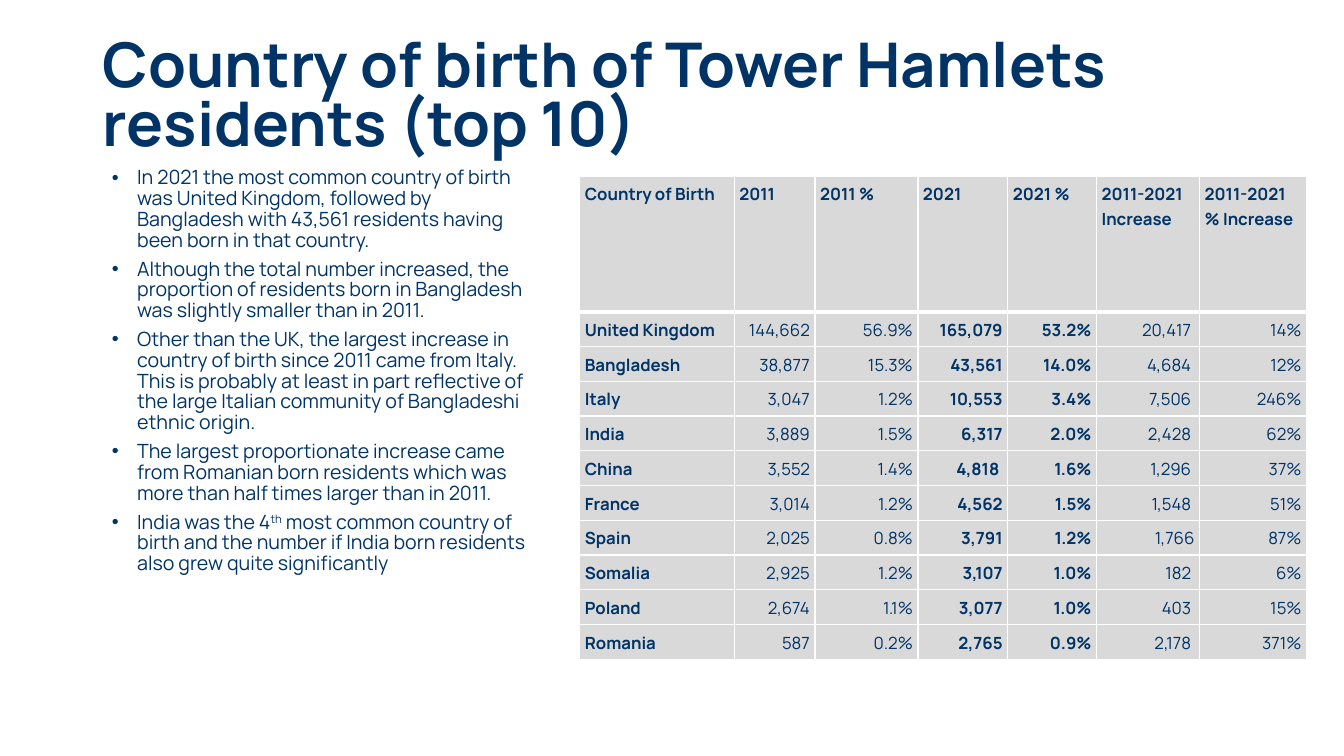
from dataclasses import dataclass
from lxml.etree import SubElement
from pptx import Presentation
from pptx.dml.color import RGBColor as RGB
from pptx.enum.text import MSO_ANCHOR as Anchor, MSO_AUTO_SIZE as Fit, PP_ALIGN as Align
from pptx.oxml.ns import qn
from pptx.util import Inches, Pt


@dataclass(frozen=True)
class Theme:
    font: str = "Manrope"
    ink: str = "003366"
    cell: str = "D9D9D9"
    rule: str = "FFFFFF"
    title: int = 44
    body: int = 14
    table: int = 12


T = Theme()
W, H = Inches(13.33), Inches(7.5)

TITLE = "Country of birth of Tower Hamlets residents (top 10)"
POINTS = [
    ["In 2021 the most common country of birth was United Kingdom, followed by "
     "Bangladesh with 43,561 residents having been born in that country."],
    ["Although the total number increased, the proportion of residents born in "
     "Bangladesh was slightly smaller than in 2011."],
    ["Other than the UK, the largest increase in country of birth since 2011 came "
     "from Italy. This is probably at least in part reflective of the large Italian "
     "community of Bangladeshi ethnic origin."],
    ["The largest proportionate increase came from Romanian born residents which "
     "was more than half times larger than in 2011."],
    ["India was the 4", "th", " most common country of birth and the number if India "
     "born residents also grew quite significantly"],
]
HEADER = ["Country of Birth", "2011", "2011 %", "2021", "2021 %",
          "2011-2021 Increase", "2011-2021 % Increase"]
COUNTRIES = [
    ["United Kingdom", "144,662", "56.9%", "165,079", "53.2%", "20,417 ", "14%"],
    ["Bangladesh", "38,877", "15.3%", "43,561", "14.0%", "4,684 ", "12%"],
    ["Italy", "3,047", "1.2%", "10,553", "3.4%", "7,506 ", "246%"],
    ["India", "3,889", "1.5%", "6,317", "2.0%", "2,428 ", "62%"],
    ["China", "3,552", "1.4%", "4,818 ", "1.6%", "1,296 ", "37%"],
    ["France", "3,014", "1.2%", "4,562", "1.5%", "1,548 ", "51%"],
    ["Spain", "2,025", "0.8%", "3,791", "1.2%", "1,766", "87%"],
    ["Somalia", "2,925", "1.2%", "3,107", "1.0%", "182 ", "6%"],
    ["Poland", "2,674", "1.1%", "3,077", "1.0%", "403 ", "15%"],
    ["Romania", "587", "0.2%", "2,765", "0.9%", "2,178 ", "371%"],
]
COL_SHARES = [1.53, 0.8, 1.02, 0.89, 0.88, 1.02, 1.06]
BOLD_COLS = {0, 3, 4}


def area(x, y, w, h):
    return [int(v * side / 100) for v, side in ((x, W), (y, H), (w, W), (h, H))]


def place(sp, box, anchor):
    sp.left, sp.top, sp.width, sp.height = box
    tf = sp.text_frame
    tf.word_wrap = True
    tf.auto_size = Fit.NONE
    tf.vertical_anchor = anchor
    return tf


def add_run(p, text, size, bold=False):
    r = p.add_run()
    r.text = text
    f = r.font
    f.name, f.size, f.bold = T.font, Pt(size), bold
    f.color.rgb = RGB.from_string(T.ink)
    return r


def add_title(s, box):
    p = place(s.shapes.title, box, Anchor.MIDDLE).paragraphs[0]
    p.alignment = Align.LEFT
    p.line_spacing = 0.79
    add_run(p, TITLE, T.title, True)


def add_points(s, box):
    tf = place(s.placeholders[1], box, Anchor.TOP)
    for i, parts in enumerate(POINTS):
        p = tf.add_paragraph() if i else tf.paragraphs[0]
        pPr = p._p.get_or_add_pPr()
        pPr.set("marL", str(Inches(0.25)))
        pPr.set("indent", str(-Inches(0.25)))
        SubElement(pPr, qn("a:buFont"), typeface="Arial")
        SubElement(pPr, qn("a:buChar"), char="•")
        p.line_spacing = 0.88
        p.space_before = Pt(6 if i else 0)
        for part in parts:
            r = add_run(p, part, T.body)
            if part == "th":
                r._r.get_or_add_rPr().set("baseline", "30000")


def add_borders(cell, row):
    widths = {"L": 1, "R": 1, "T": 3 if row == 1 else 1, "B": 3 if row == 0 else 1}
    tcPr = cell._tc.get_or_add_tcPr()
    for side, width in widths.items():
        ln = SubElement(tcPr, qn("a:ln" + side), w=str(Pt(width)))
        SubElement(SubElement(ln, qn("a:solidFill")), qn("a:srgbClr"), val=T.rule)


def fill_cell(cell, text, row, col):
    number = row > 0 and col > 0
    add_borders(cell, row)
    cell.fill.solid()
    cell.fill.fore_color.rgb = RGB.from_string(T.cell)
    cell.margin_left = cell.margin_right = Inches(0.05)
    cell.margin_top = cell.margin_bottom = Inches(0.05)
    cell.vertical_anchor = Anchor.MIDDLE if number else Anchor.TOP
    p = cell.text_frame.paragraphs[0]
    p.alignment = Align.RIGHT if number else Align.LEFT
    p.line_spacing = 1.07
    p.space_after = Pt(8)
    add_run(p, text, T.table, row == 0 or col in BOLD_COLS)


def add_country_table(s, box):
    rows = [HEADER] + COUNTRIES
    tbl = s.shapes.add_table(len(rows), len(HEADER), *box).table
    tbl.horz_banding = False
    for column, share in zip(tbl.columns, COL_SHARES):
        column.width = int(box[2] * share / sum(COL_SHARES))
    head = int(box[3] * 0.28)
    for i, values in enumerate(rows):
        tbl.rows[i].height = (box[3] - head) // len(COUNTRIES) if i else head
        for j, text in enumerate(values):
            fill_cell(tbl.cell(i, j), text, i, j)


def main():
    prs = Presentation()
    prs.slide_width, prs.slide_height = W, H
    s = prs.slides.add_slide(prs.slide_layouts[1])
    add_title(s, area(6.9, 3.47, 80.2, 19.33))
    add_points(s, area(7.58, 21.6, 33, 68.93))
    add_country_table(s, area(43.14, 23.33, 54.09, 63.93))
    prs.save("out.pptx")


if __name__ == "__main__":
    main()
